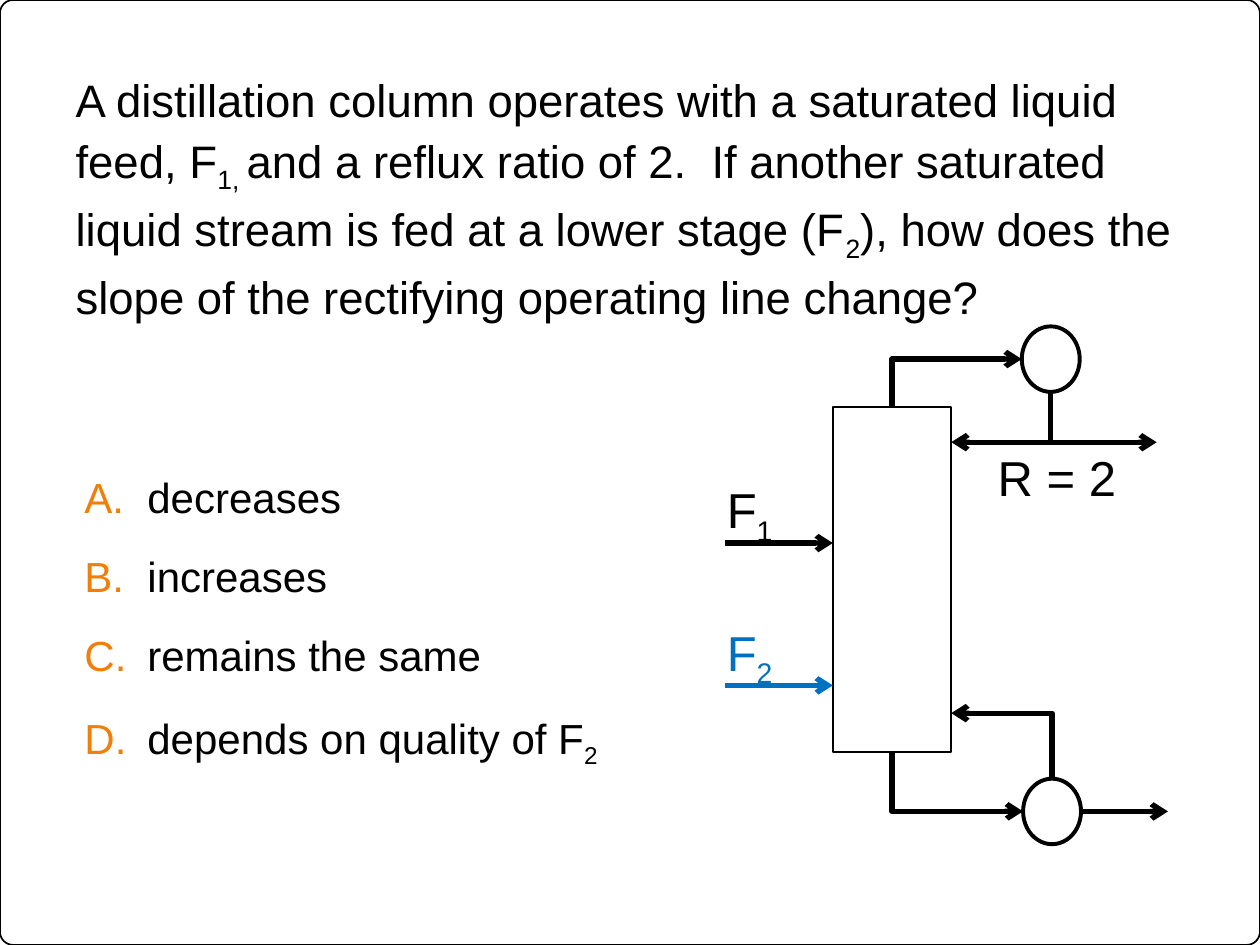
from lxml import etree
from pptx import Presentation
from pptx.dml.color import RGBColor
from pptx.enum.shapes import MSO_CONNECTOR, MSO_SHAPE
from pptx.enum.text import MSO_ANCHOR, MSO_AUTO_SIZE, PP_ALIGN
from pptx.oxml.ns import qn
from pptx.util import Inches, Pt

STRAIGHT, ELBOW = MSO_CONNECTOR.STRAIGHT, MSO_CONNECTOR.ELBOW
RECT, OVAL, ROUND = MSO_SHAPE.RECTANGLE, MSO_SHAPE.OVAL, MSO_SHAPE.ROUNDED_RECTANGLE
TOP, LEFT = MSO_ANCHOR.TOP, PP_ALIGN.LEFT
FIXED = MSO_AUTO_SIZE.NONE

COLORS = {"ink": "000000", "paper": "FFFFFF", "blue": "0070C0", "orange": "F07F09"}

# Text between bars is set as subscript.
QUESTION = (
    "A distillation column operates with a saturated liquid feed, F|1, |and a reflux "
    "ratio of 2.  If another saturated liquid stream is fed at a lower stage (F|2|), "
    "how does the slope of the rectifying operating line change?"
)
CHOICES = ["decreases", "increases", "remains the same", "depends on quality of F|2|"]
FEEDS = [("F|1|", 4.31, "ink"), ("F|2|", 5.44, "blue")]
REFLUX = "R = 2"

COLUMN = (6.61, 3.23, 0.94, 2.74)
DRUM = (8.11, 2.59, 0.46, 0.52)
BOILER = (8.12, 6.18, 0.46, 0.52)
SPLIT, RETURN = 3.51, 5.66


def color(name):
    return RGBColor.from_string(COLORS[name])


def write(par, text, size=24, tint="ink"):
    for i, part in enumerate(text.split("|")):
        if not part:
            continue
        run = par.add_run()
        run.text = part
        run.font.size, run.font.name = Pt(size), "Arial"
        run.font.color.rgb = color(tint)
        if i % 2:
            run.font._element.set("baseline", "-25000")


def place(holder, box):
    holder.left, holder.top, holder.width, holder.height = map(Inches, box)
    frame = holder.text_frame
    frame.auto_size, frame.vertical_anchor = FIXED, TOP
    frame.margin_left = frame.margin_right = frame.margin_bottom = 0
    frame.margin_top = Inches(0.03)
    return frame


def number(par):
    props = par._p.get_or_add_pPr()
    props.set("marL", str(Inches(0.5)))
    props.set("indent", str(Inches(-0.5)))
    tint = etree.SubElement(props, qn("a:buClr"))
    etree.SubElement(tint, qn("a:srgbClr"), val=COLORS["orange"])
    etree.SubElement(props, qn("a:buFont"), typeface="+mj-lt")
    etree.SubElement(props, qn("a:buAutoNum"), type="alphaUcPeriod")


def label(slide, text, box, tint="ink"):
    frame = slide.shapes.add_textbox(*map(Inches, box)).text_frame
    frame.word_wrap = False
    write(frame.paragraphs[0], text, size=28, tint=tint)


def draw(slide, kind, box, width=1, fill="paper"):
    shape = slide.shapes.add_shape(kind, *map(Inches, box))
    shape.shadow.inherit = False
    if fill:
        shape.fill.solid()
        shape.fill.fore_color.rgb = color(fill)
    else:
        shape.fill.background()
    shape.line.color.rgb, shape.line.width = color("ink"), Pt(width)
    return shape


def pipe(slide, tip, tail, tint="ink"):
    bent = tip[0] != tail[0] and tip[1] != tail[1]
    line = slide.shapes.add_connector(
        ELBOW if bent else STRAIGHT, *map(Inches, tip + tail))
    line.line.color.rgb, line.line.width = color(tint), Pt(3)
    props = line._element.spPr
    if bent:
        props.find(qn("a:prstGeom")).set("prst", "bentConnector2")
    etree.SubElement(props.find(qn("a:ln")), qn("a:headEnd"), type="arrow")
    etree.SubElement(props, qn("a:effectLst"))


def main():
    """Build the distillation column question slide."""
    deck = Presentation()
    deck.slide_width, deck.slide_height = Inches(10), Inches(7.5)
    slide = deck.slides.add_slide(deck.slide_layouts[1])
    title, body = slide.placeholders

    draw(slide, ROUND, (0, 0, 10, 7.5), fill=None).adjustments[0] = 0.014

    par = place(title, (0.6, 0.5, 8.79, 2.5)).paragraphs[0]
    par.alignment, par.line_spacing = LEFT, 1.1
    write(par, QUESTION, size=26)

    frame = place(body, (0.67, 3.51, 5.17, 3.62))
    for i, text in enumerate(CHOICES):
        par = frame.add_paragraph() if i else frame.paragraphs[0]
        number(par)
        par.line_spacing, par.space_before = 1.5, Pt(2 if i else 0)
        write(par, text)

    left, top, width, height = COLUMN
    right, mid, base = left + width, left + width / 2, top + height
    draw(slide, RECT, COLUMN)
    for text, y, tint in FEEDS:
        pipe(slide, (left, y), (5.75, y), tint)
        label(slide, text, (5.67, y - 0.55, 0.59, 0.57), tint)

    for (x, y, wide, high), end in ((DRUM, top), (BOILER, base)):
        draw(slide, OVAL, (x, y, wide, high), width=2.25)
        pipe(slide, (x, y + high / 2), (mid, end))

    x, y, wide, high = DRUM
    pipe(slide, (right, SPLIT), (x + wide / 2, y + high))
    pipe(slide, (9.18, SPLIT), (x + wide / 2, SPLIT))
    label(slide, REFLUX, (7.82, 3.5, 1.15, 0.57))

    x, y, wide, high = BOILER
    pipe(slide, (right, RETURN), (x + wide / 2, y))
    pipe(slide, (9.27, y + high / 2), (x + wide, y + high / 2))

    deck.save("out.pptx")


if __name__ == "__main__":
    main()
